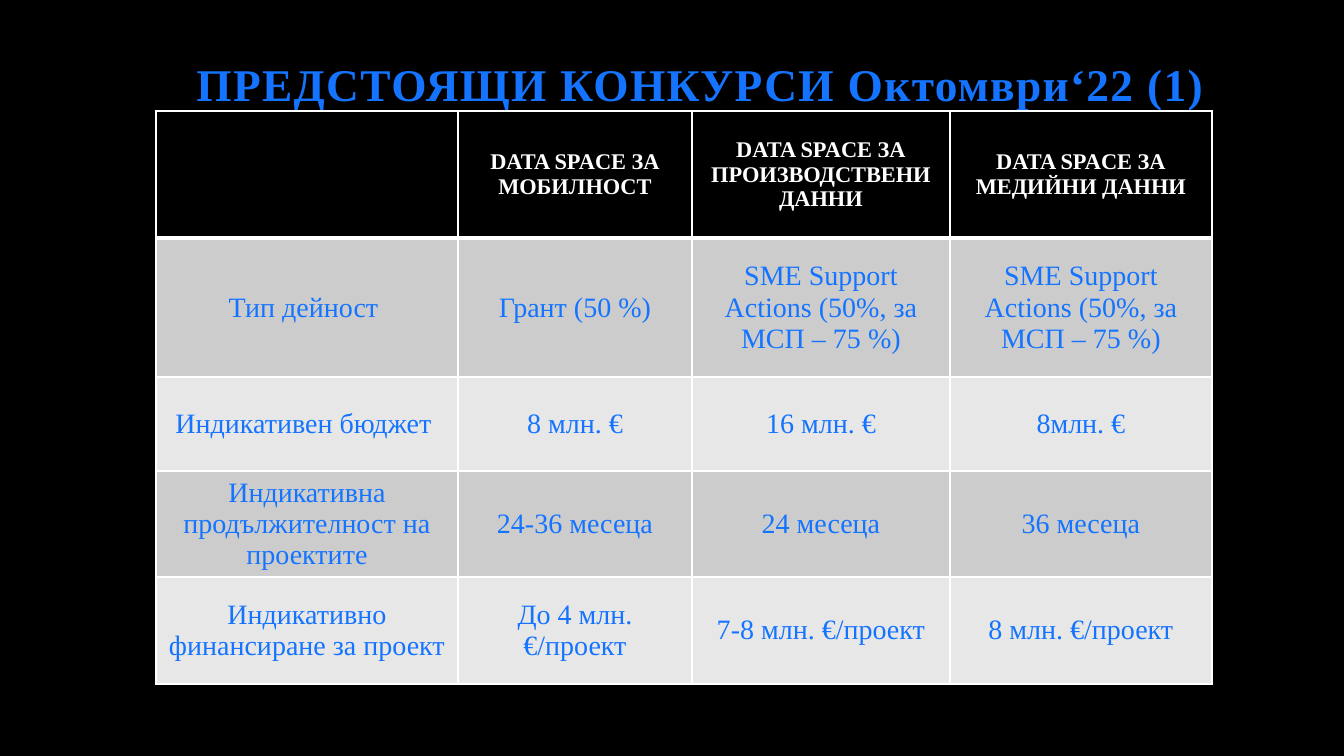
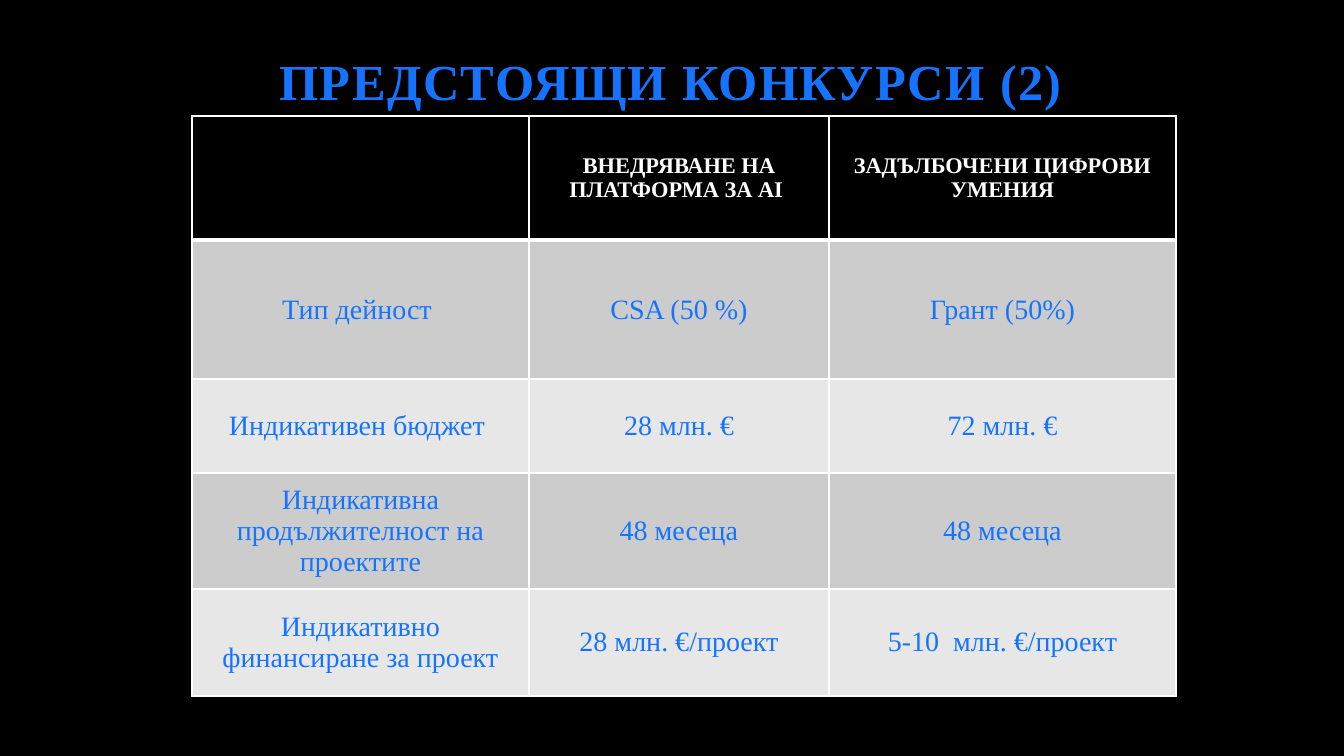
from lxml.etree import SubElement
from pptx import Presentation
from pptx.dml.color import RGBColor
from pptx.enum.text import MSO_ANCHOR, MSO_AUTO_SIZE, PP_ALIGN
from pptx.oxml.ns import qn
from pptx.util import Pt

PX = 9071
FONT = "Times New Roman"
BLACK, WHITE, BLUE = "000000", "FFFFFF", "1474FF"
BANDS = ["E7E7E7", "CCCCCC"]
LABELS = [
    "",
    "Тип дейност ",
    "Индикативен бюджет ",
    "Индикативна продължителност на проектите",
    "Индикативно финансиране за проект",
]
SLIDES = [
    dict(
        title="ПРЕДСТОЯЩИ КОНКУРСИ Октомври‘22 (1)",
        size=32.4,
        title_width=1067,
        left=156,
        top=111,
        widths=[302, 234, 258, 262],
        heights=[127, 139, 94, 106, 107],
        columns=[
            ["DATA SPACE ЗА МОБИЛНОСТ", "Грант (50 %)", "8 млн. €",
             "24-36 месеца", "До 4 млн. €/проект"],
            ["DATA SPACE ЗА ПРОИЗВОДСТВЕНИ ДАННИ",
             "SME Support Actions (50%, за МСП – 75 %)", "16 млн. €",
             "24 месеца", "7-8 млн. €/проект"],
            ["DATA SPACE ЗА МЕДИЙНИ ДАННИ",
             "SME Support Actions (50%, за МСП – 75 %)", "8млн. €",
             "36 месеца", "8 млн. €/проект"],
        ],
    ),
    dict(
        title="ПРЕДСТОЯЩИ КОНКУРСИ (2)",
        size=36,
        title_width=1008,
        left=192,
        top=116,
        widths=[337, 300, 347],
        heights=[124, 139, 94, 116, 107],
        columns=[
            ["ВНЕДРЯВАНЕ НА ПЛАТФОРМА ЗА AI ", "CSA (50 %)", "28 млн. €",
             "48 месеца", "28 млн. €/проект"],
            ["ЗАДЪЛБОЧЕНИ ЦИФРОВИ УМЕНИЯ", "Грант (50%)", "72 млн. €",
             "48 месеца", "5-10  млн. €/проект"],
        ],
    ),
]


def rgb(value):
    return RGBColor.from_string(value)


def write(tf, text, size=20, color=BLUE, bold=False, line=1.0, spacing=0):
    p = tf.paragraphs[0]
    p.alignment = PP_ALIGN.CENTER
    p.line_spacing = line
    r = p.add_run()
    r.text = text
    r.font.name = FONT
    r.font.size = Pt(size)
    r.font.bold = bold
    r.font.color.rgb = rgb(color)
    if spacing:
        r.font._element.set("spc", str(spacing * 100))


prs = Presentation()
prs.slide_width = 1344 * PX
prs.slide_height = 756 * PX
fill = prs.slide_master.background.fill
fill.solid()
fill.fore_color.rgb = rgb(BLACK)

for data in SLIDES:
    s = prs.slides.add_slide(prs.slide_layouts[5])
    sp = s.shapes.title
    sp.left, sp.top = 167 * PX, 42 * PX
    sp.width, sp.height = data["title_width"] * PX, 74 * PX
    tf = sp.text_frame
    tf.word_wrap = True
    tf.auto_size = MSO_AUTO_SIZE.NONE
    tf.vertical_anchor = MSO_ANCHOR.BOTTOM
    write(tf, data["title"], size=data["size"], bold=True, line=0.9, spacing=1)

    widths, heights = data["widths"], data["heights"]
    table = s.shapes.add_table(
        len(heights), len(widths), data["left"] * PX, data["top"] * PX,
        sum(widths) * PX, sum(heights) * PX).table
    for col, width in zip(table.columns, widths):
        col.width = width * PX
    for row, height in zip(table.rows, heights):
        row.height = height * PX

    for j, texts in enumerate([LABELS] + data["columns"]):
        for i, text in enumerate(texts):
            cell = table.cell(i, j)
            cell.vertical_anchor = MSO_ANCHOR.MIDDLE
            header = i == 0
            tcPr = cell._tc.get_or_add_tcPr()
            for side in "LRTB":
                thick = (i, side) in [(0, "B"), (1, "T")]
                ln = SubElement(tcPr, qn("a:ln" + side), w=str(Pt(3 if thick else 1)))
                SubElement(SubElement(ln, qn("a:solidFill")), qn("a:srgbClr"), val=WHITE)
            cell.fill.solid()
            cell.fill.fore_color.rgb = rgb(BLACK if header else BANDS[i % 2])
            if text:
                write(cell.text_frame, text, size=16 if header else 20,
                      color=WHITE if header else BLUE, bold=header)

prs.save("out.pptx")
